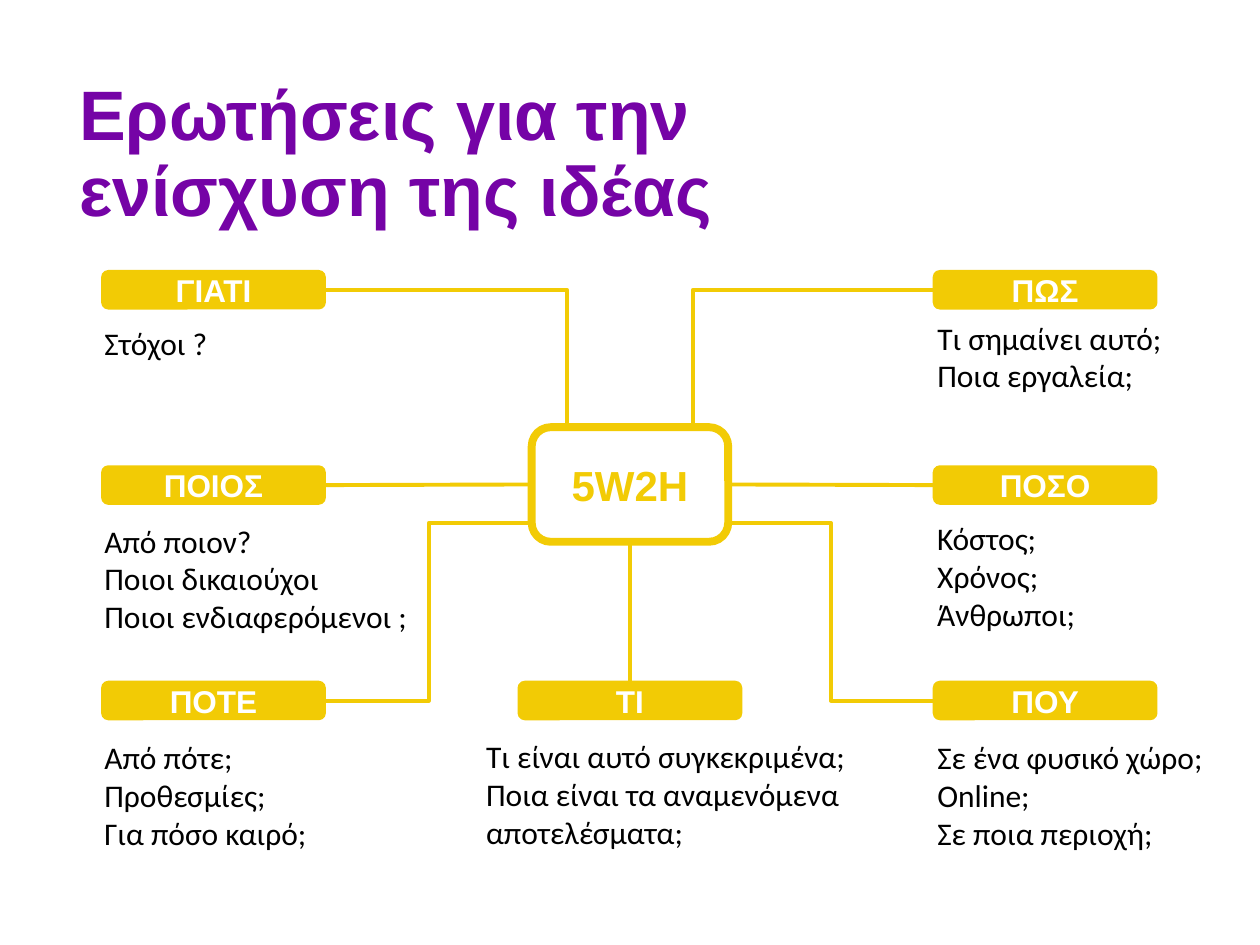
from pptx import Presentation
from pptx import util as u
from pptx.dml.color import RGBColor
from pptx.enum import shapes, text
from lxml import etree

Inches = u.Inches
YELLOW, PURPLE, WHITE, BLACK = "F2CB05", "7503A6", "FFFFFF", "000000"
A = "{http://schemas.openxmlformats.org/drawingml/2006/main}"


def color(hex_value):
    return RGBColor.from_string(hex_value)


def write(frame, lines, font_values, hex_value, align, anchor, spacing=1.0):
    frame.word_wrap = True
    frame.vertical_anchor = anchor
    for i, line in enumerate(lines):
        paragraph = frame.paragraphs[0] if i == 0 else frame.add_paragraph()
        paragraph.alignment = align
        paragraph.line_spacing = spacing
        run = paragraph.add_run()
        run.text = line
        for key, value in font_values.items():
            setattr(run.font, key, value)
        run.font.color.rgb = color(hex_value)


title_font = {"name": "Arial", "size": u.Pt(40), "bold": True}
hub_font = {"name": "Arial", "size": u.Pt(24), "bold": True}
label_font = {"name": "Arial", "size": u.Pt(18), "bold": True}
answer_font = {"name": "Calibri", "size": u.Pt(18), "bold": False}
LEFT, CENTER = text.PP_ALIGN.LEFT, text.PP_ALIGN.CENTER
TOP, MIDDLE = text.MSO_ANCHOR.TOP, text.MSO_ANCHOR.MIDDLE

deck = Presentation()
deck.slide_width, deck.slide_height = Inches(10), Inches(7.5)
slide = deck.slides.add_slide(deck.slide_layouts[6])

# Title
title = slide.shapes.add_textbox(Inches(0.53), Inches(0.51), Inches(7.11), Inches(1.45))
write(title.text_frame, ["Ερωτήσεις για την ενίσχυση της ιδέας"],
      title_font, PURPLE, LEFT, MIDDLE, 0.9)

# Question labels on a grid of three columns and three rows, and the central hub
label_w, label_h = 1.77, 0.3
columns = [0.81, (10 - label_w) / 2, 7.41]
rows = [2.15, 3.7, 5.41]
questions = {
    "ΓΙΑΤΙ": (0, 0), "ΠΟΙΟΣ": (0, 1), "ΠΟΤΕ": (0, 2),
    "ΠΩΣ": (2, 0), "ΠΟΣΟ": (2, 1), "ΠΟΥ": (2, 2),
    "ΤΙ": (1, 2),
}
boxes = [(name, columns[c], rows[r], label_w, label_h, 1, label_font, WHITE)
         for name, (c, r) in questions.items()]
boxes.append(("5W2H", 4.22, 3.39, 1.56, 0.91, 4.5, hub_font, YELLOW))
nodes = {}
for name, x, y, w, h, border, font, ink in boxes:
    node = slide.shapes.add_shape(shapes.MSO_SHAPE.ROUNDED_RECTANGLE,
                                  Inches(x), Inches(y), Inches(w), Inches(h))
    node.shadow.inherit = False
    if name in questions:
        node.fill.solid()
        node.fill.fore_color.rgb = color(YELLOW)
    else:
        node.fill.background()
    node.line.color.rgb = color(YELLOW)
    node.line.width = u.Pt(border)
    write(node.text_frame, [name], font, ink, CENTER, MIDDLE)
    nodes[name] = node

# Branches: start, end, bend position, joined nodes with their sides
branches = [
    ((4.49, 3.39), (2.59, 2.3), -500, None),
    ((5.51, 3.39), (7.41, 2.3), -500, None),
    ((4.22, 4.15), (2.59, 5.56), 50000, None),
    ((5.78, 4.15), (7.41, 5.56), 50000, None),
    ((2.58, 3.85), (4.22, 3.85), None, ("ΠΟΙΟΣ", 3, "5W2H", 1)),
    ((5.78, 3.85), (7.41, 3.85), None, ("5W2H", 3, "ΠΟΣΟ", 1)),
    ((5, 4.3), (5, 5.41), None, ("5W2H", 2, "ΤΙ", 0)),
]
for start, end, bend, joined in branches:
    kind = shapes.MSO_CONNECTOR.STRAIGHT if joined else shapes.MSO_CONNECTOR.ELBOW
    branch = slide.shapes.add_connector(kind, *map(Inches, start + end))
    branch.line.color.rgb = color(YELLOW)
    branch.line.width = u.Pt(2.25)
    properties = branch._element.spPr
    etree.SubElement(properties, A + "effectLst")
    if joined:
        first, first_side, last, last_side = joined
        branch.begin_connect(nodes[first], first_side)
        branch.end_connect(nodes[last], last_side)
    else:
        guides = properties.find(f"{A}prstGeom/{A}avLst")
        etree.SubElement(guides, A + "gd", name="adj1", fmla=f"val {bend}")

# Answers under the labels
answers = [
    (0.73, 2.52, 1.45, 0.4, ["Στόχοι ?"]),
    (0.73, 4.09, 2.71, 1.01, ["Από ποιον?", "Ποιοι δικαιούχοι", "Ποιοι ενδιαφερόμενοι ;"]),
    (0.73, 5.81, 2.35, 1.01, ["Από πότε;", "Προθεσμίες;", "Για πόσο καιρό;"]),
    (3.76, 5.8, 3.4, 1.01, ["Τι είναι αυτό συγκεκριμένα;",
                            "Ποια είναι τα αναμενόμενα αποτελέσματα;"]),
    (7.34, 5.81, 2.35, 1.01, ["Σε ένα φυσικό χώρο;", "Online;", "Σε ποια περιοχή;"]),
    (7.34, 4.07, 1.77, 1.01, ["Κόστος;", "Χρόνος;", "Άνθρωποι;"]),
    (7.34, 2.48, 2.21, 0.71, ["Τι σημαίνει αυτό;", "Ποια εργαλεία;"]),
]
for x, y, w, h, lines in answers:
    answer = slide.shapes.add_textbox(Inches(x), Inches(y), Inches(w), Inches(h))
    write(answer.text_frame, lines, answer_font, BLACK, LEFT, TOP)

deck.save("out.pptx")
